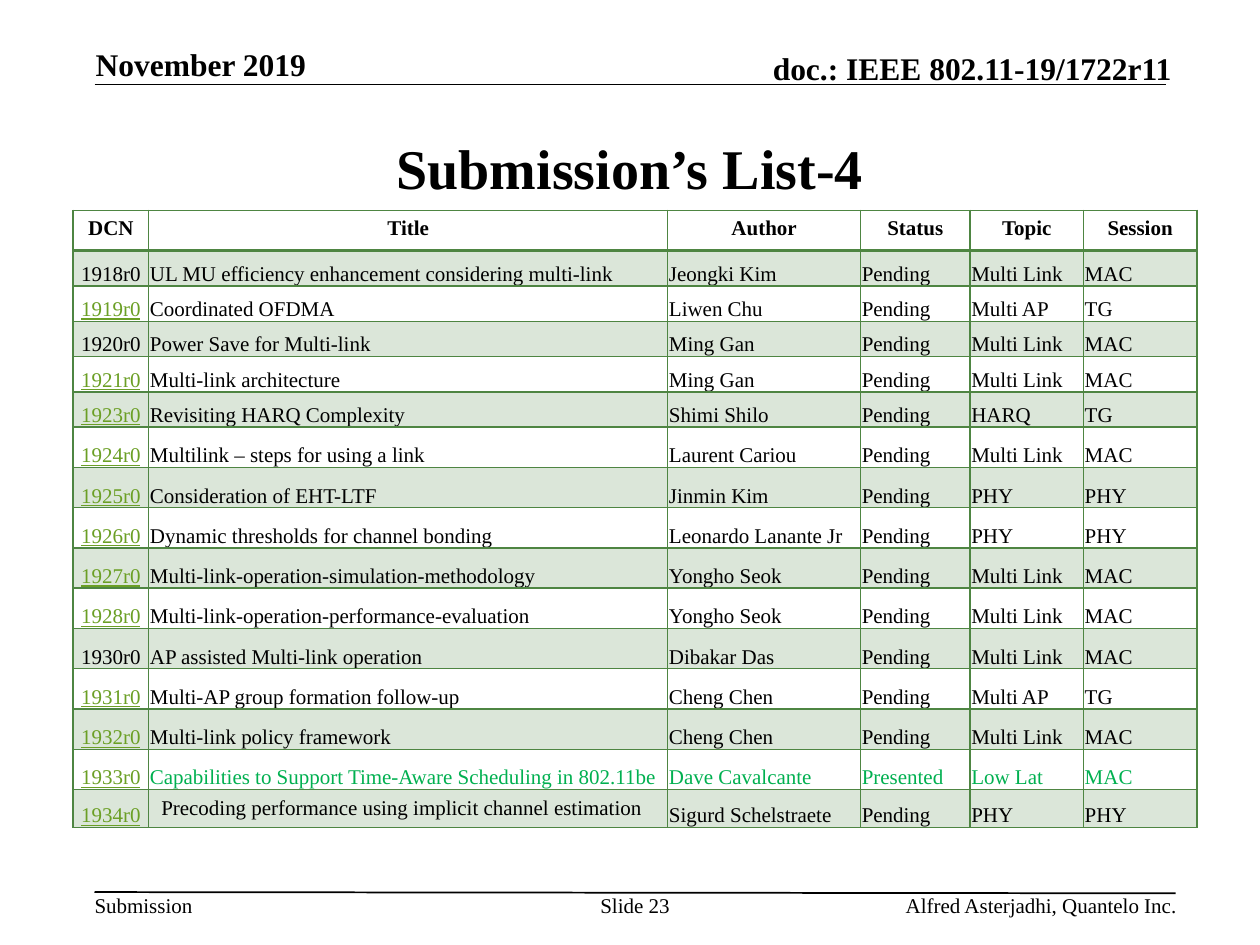
from lxml import etree
from pptx import Presentation
from pptx.dml.color import RGBColor
from pptx.enum.shapes import MSO_CONNECTOR
from pptx.enum.text import MSO_ANCHOR, PP_ALIGN
from pptx.oxml.ns import qn
from pptx.util import Inches, Pt

LEFT, CENTER, RIGHT = PP_ALIGN.LEFT, PP_ALIGN.CENTER, PP_ALIGN.RIGHT
TOP, MIDDLE, BOTTOM = MSO_ANCHOR.TOP, MSO_ANCHOR.MIDDLE, MSO_ANCHOR.BOTTOM
STRAIGHT = MSO_CONNECTOR.STRAIGHT

FONT = "Times New Roman"
BLACK, GREEN, LINK, PRESENTED = "000000", "4E8542", "6B9F25", "00B050"
BAND_ALPHA = 20

COL_WIDTHS = [0.6, 4.12, 1.53, 0.87, 0.9, 0.9]
ROW_HEIGHTS = [0.32] + [0.28] * 5 + [0.32] * 9 + [0.28]
HEADINGS = ["DCN", "Title", "Author", "Status", "Topic", "Session"]
UNLINKED = {"1918r0", "1920r0", "1930r0"}
SUBMISSIONS = [
    ("1918r0", "UL MU efficiency enhancement considering multi-link", "Jeongki Kim", "Pending", "Multi Link", "MAC"),
    ("1919r0", "Coordinated OFDMA", "Liwen Chu", "Pending", "Multi AP", "TG"),
    ("1920r0", "Power Save for Multi-link", "Ming Gan", "Pending", "Multi Link", "MAC"),
    ("1921r0", "Multi-link architecture", "Ming Gan", "Pending", "Multi Link", "MAC"),
    ("1923r0", "Revisiting HARQ Complexity", "Shimi Shilo", "Pending", "HARQ", "TG"),
    ("1924r0", "Multilink – steps for using a link", "Laurent Cariou", "Pending", "Multi Link", "MAC"),
    ("1925r0", "Consideration of EHT-LTF", "Jinmin Kim", "Pending", "PHY", "PHY"),
    ("1926r0", "Dynamic thresholds for channel bonding", "Leonardo Lanante Jr", "Pending", "PHY", "PHY"),
    ("1927r0", "Multi-link-operation-simulation-methodology", "Yongho Seok", "Pending", "Multi Link", "MAC"),
    ("1928r0", "Multi-link-operation-performance-evaluation", "Yongho Seok", "Pending", "Multi Link", "MAC"),
    ("1930r0", "AP assisted Multi-link operation", "Dibakar Das", "Pending", "Multi Link", "MAC"),
    ("1931r0", "Multi-AP group formation follow-up", "Cheng Chen", "Pending", "Multi AP", "TG"),
    ("1932r0", "Multi-link policy framework", "Cheng Chen", "Pending", "Multi Link", "MAC"),
    ("1933r0", "Capabilities to Support Time-Aware Scheduling in 802.11be", "Dave Cavalcante", "Presented", "Low Lat", "MAC"),
    ("1934r0", "Precoding performance using implicit channel estimation", "Sigurd Schelstraete", "Pending", "PHY", "PHY"),
]


def rgb(color):
    return RGBColor.from_string(color)


def set_attrs(obj, **values):
    for name, value in values.items():
        setattr(obj, name, value)


def set_margins(obj, left, top, right, bottom):
    set_attrs(obj, margin_left=Inches(left), margin_top=Inches(top),
              margin_right=Inches(right), margin_bottom=Inches(bottom))


def write(tf, text, align=LEFT, color=BLACK, size=12, **fmt):
    p = tf.paragraphs[0]
    p.alignment = align
    r = p.add_run()
    r.text = text
    set_attrs(r.font, name=FONT, size=Pt(size), **fmt)
    r.font.color.rgb = rgb(color)


def add_text(s, box, text, anchor=TOP, margins=(0, 0, 0, 0), wrap=True, **fmt):
    tf = s.shapes.add_textbox(*map(Inches, box)).text_frame
    set_attrs(tf, word_wrap=wrap, vertical_anchor=anchor)
    set_margins(tf, *margins)
    write(tf, text, **fmt)


def add_rule(s, x1, y1, x2, y2):
    line = s.shapes.add_connector(STRAIGHT, *map(Inches, (x1, y1, x2, y2)))
    line.line.color.rgb = rgb(BLACK)
    line.line.width = Pt(1)
    etree.SubElement(line._element.spPr, qn("a:effectLst"))


def add_header(s, left, top, width):
    heading = dict(anchor=BOTTOM, size=18, bold=True)
    add_rule(s, left, top + 0.31, left + width, top + 0.31)
    add_text(s, (left + 0.01, top, 2.05, 0.3), "November 2019", **heading)
    add_text(s, (left + width - 3.78, top + 0.03, 3.83, 0.3),
             "doc.: IEEE 802.11-19/1722r11", align=RIGHT, **heading)


def add_footer(s, left, top, width):
    add_rule(s, left, top, left + width, top + 0.01)
    add_text(s, (left, top, 0.78, 0.2), "Submission", wrap=False)
    add_text(s, (left + 4, top, 0.58, 0.4), "Slide 23", align=CENTER)
    add_text(s, (left + width - 3.47, top, 3.48, 0.2),
             "Alfred Asterjadhi, Quantelo Inc.", align=RIGHT)


def add_borders(cell, top_width, bottom_width):
    tcPr = cell._tc.get_or_add_tcPr()
    widths = {"lnL": 1, "lnR": 1, "lnT": top_width, "lnB": bottom_width}
    for side, width in widths.items():
        ln = etree.SubElement(tcPr, qn(f"a:{side}"), w=str(Pt(width)))
        fill = etree.SubElement(ln, qn("a:solidFill"))
        etree.SubElement(fill, qn("a:srgbClr"), val=GREEN)


def fill_cell(cell, banded):
    if not banded:
        cell.fill.background()
        return
    cell.fill.solid()
    cell.fill.fore_color.rgb = rgb(GREEN)
    clr = cell._tc.tcPr.find(qn("a:solidFill")).find(qn("a:srgbClr"))
    etree.SubElement(clr, qn("a:alpha"), val=str(BAND_ALPHA * 1000))


def cell_format(row, col, values):
    if row == 0:
        return dict(align=CENTER, bold=True)
    if col == 0:
        linked = values[0] not in UNLINKED
        return dict(align=CENTER, color=LINK if linked else BLACK, underline=linked)
    return dict(color=PRESENTED if values[3] == "Presented" else BLACK)


def add_submissions(s, left, top):
    rows = [HEADINGS, *SUBMISSIONS]
    frame = s.shapes.add_table(len(rows), len(HEADINGS), Inches(left), Inches(top),
                               Inches(sum(COL_WIDTHS)), Inches(sum(ROW_HEIGHTS)))
    table = frame.table
    set_attrs(table, first_row=False, horz_banding=False)
    for column, width in zip(table.columns, COL_WIDTHS):
        column.width = Inches(width)
    for i, values in enumerate(rows):
        table.rows[i].height = Inches(ROW_HEIGHTS[i])
        for j, text in enumerate(values):
            cell = table.cell(i, j)
            if i == len(rows) - 1 and j == 1:
                cell.vertical_anchor = MIDDLE
            elif i > 0:
                cell.vertical_anchor = BOTTOM
                set_margins(cell, 0.01, 0.01, 0.01, 0)
            add_borders(cell, 2 if i == 1 else 1, 2 if i == 0 else 1)
            fill_cell(cell, i % 2 == 1)
            write(cell.text_frame, text, **cell_format(i, j, values))


def main():
    prs = Presentation()
    prs.slide_width, prs.slide_height = Inches(10), Inches(7.5)
    s = prs.slides.add_slide(prs.slide_layouts[6])
    add_header(s, 0.75, 0.36, 8.5)
    add_footer(s, 0.75, 7.08, 8.58)
    add_text(s, (0.75, 0.75, 8.5, 1.16), "Submission’s List-4", anchor=MIDDLE,
             margins=(0.1, 0.05, 0.1, 0.05), align=CENTER, size=32, bold=True)
    add_submissions(s, 0.58, 1.67)
    prs.save("out.pptx")


if __name__ == "__main__":
    main()
